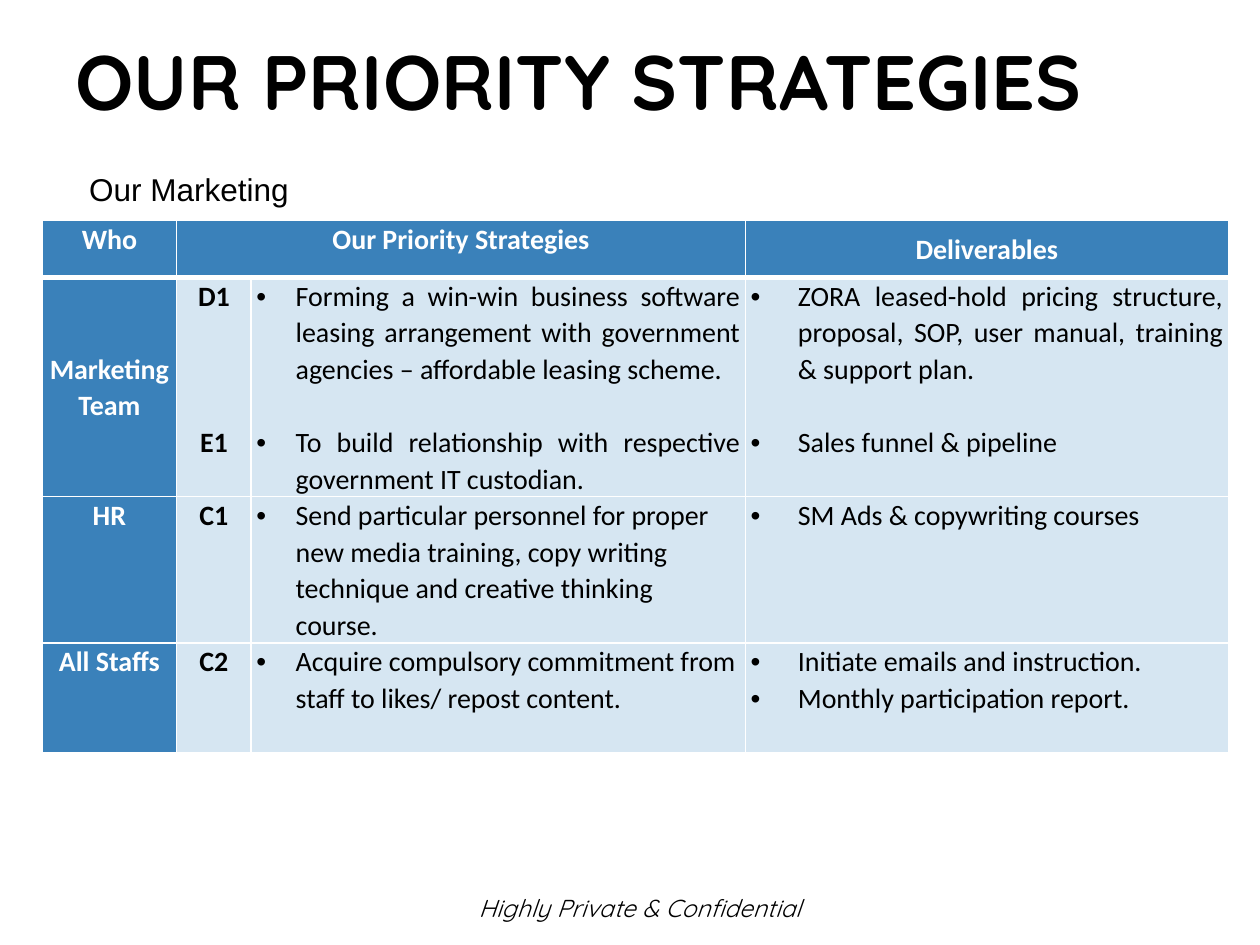
from dataclasses import dataclass

from lxml.etree import SubElement
from pptx import Presentation
from pptx.dml.color import RGBColor
from pptx.enum.text import MSO_ANCHOR, PP_ALIGN
from pptx.oxml.ns import qn
from pptx.util import Pt

BLACK = RGBColor(0x00, 0x00, 0x00)
WHITE = RGBColor(0xFF, 0xFF, 0xFF)
BLUE = RGBColor(0x3A, 0x81, 0xBA)
PALE_BLUE = RGBColor(0xD6, 0xE6, 0xF2)

LINE = 20.9  # height of one table text line, in points
COLUMN_WIDTHS = (77, 42.5, 282.5, 276)
ROW_HEIGHTS = (32.4, 6 * LINE, 4 * LINE, 3 * LINE)
STRATEGY_INDENT = 22.5
DELIVERABLE_INDENT = 27


@dataclass(frozen=True)
class TextBox:
    text: str
    left: float
    top: float
    width: float
    height: float
    font: dict
    alignment: PP_ALIGN = PP_ALIGN.LEFT
    wrap: bool = True


@dataclass(frozen=True)
class CellText:
    lines: tuple[str, ...]
    font: dict
    fill: RGBColor = PALE_BLUE
    alignment: PP_ALIGN = PP_ALIGN.CENTER
    anchor: MSO_ANCHOR = MSO_ANCHOR.TOP
    gap: float = 0
    indent: float = 0


@dataclass(frozen=True)
class StrategyRow:
    who: str
    codes: tuple[str, ...]
    strategies: tuple[str, ...]
    deliverables: tuple[str, ...]
    alignment: PP_ALIGN = PP_ALIGN.LEFT
    who_anchor: MSO_ANCHOR = MSO_ANCHOR.TOP
    code_gap: float = 0
    bullet_gap: float = 0


TABLE_FONT = {"name": "Calibri", "size": Pt(16), "bold": False}
BODY = TABLE_FONT | {"color": BLACK}
CODE = BODY | {"bold": True}
HEADING = CODE | {"color": WHITE}

TEXT_BOXES = (
    TextBox("Highly Private & Confidential", 266.4, 510.5, 242.6, 16.6,
            {"name": "Quicksand", "size": Pt(14), "italic": True, "color": BLACK}),
    TextBox("OUR PRIORITY STRATEGIES", 12.2, 16.6, 637.2, 57.6,
            {"name": "Quicksand", "size": Pt(44), "bold": True, "color": BLACK},
            alignment=PP_ALIGN.CENTER),
    TextBox("Our Marketing", 43.9, 93.6, 141.1, 28.8,
            {"name": "Arial", "size": Pt(18), "color": BLACK}, wrap=False),
)

ROWS = (
    StrategyRow(
        "Marketing Team", ("D1", "E1"),
        ("Forming a win-win business software leasing arrangement with "
         "government agencies – affordable leasing scheme.",
         "To build relationship with respective government IT custodian."),
        ("ZORA leased-hold pricing structure, proposal, SOP, user manual, "
         "training & support plan.",
         "Sales funnel & pipeline"),
        alignment=PP_ALIGN.JUSTIFY, who_anchor=MSO_ANCHOR.MIDDLE,
        code_gap=3 * LINE, bullet_gap=LINE),
    StrategyRow(
        "HR", ("C1",),
        ("Send particular personnel for proper new media training, copy "
         "writing technique and creative thinking course.",),
        ("SM Ads & copywriting courses",)),
    StrategyRow(
        "All Staffs", ("C2",),
        ("Acquire compulsory commitment from staff to likes/ repost content.",),
        ("Initiate emails and instruction.", "Monthly participation report.")),
)


def format_font(font, values: dict) -> None:
    for name, value in values.items():
        if name == "color":
            font.color.rgb = value
        else:
            setattr(font, name, value)


def draw_text_box(slide, box: TextBox) -> None:
    shape = slide.shapes.add_textbox(
        Pt(box.left), Pt(box.top), Pt(box.width), Pt(box.height))
    frame = shape.text_frame
    frame.word_wrap = box.wrap
    frame.vertical_anchor = MSO_ANCHOR.MIDDLE
    for side in ("left", "top", "right", "bottom"):
        setattr(frame, f"margin_{side}", Pt(7.2))
    paragraph = frame.paragraphs[0]
    paragraph.alignment = box.alignment
    run = paragraph.add_run()
    run.text = box.text
    format_font(run.font, box.font)


def add_bullet(paragraph, indent: float) -> None:
    properties = paragraph._p.get_or_add_pPr()
    properties.set("marL", str(Pt(indent)))
    properties.set("indent", str(-Pt(indent)))
    SubElement(properties, qn("a:buFont")).set("typeface", "Arial")
    SubElement(properties, qn("a:buChar")).set("char", "•")


def set_borders(cell, bottom_width: float) -> None:
    properties = cell._tc.get_or_add_tcPr()
    widths = {"lnL": 1, "lnR": 1, "lnT": 1, "lnB": bottom_width}
    for tag, width in widths.items():
        line = SubElement(properties, qn(f"a:{tag}"))
        line.set("w", str(Pt(width)))
        fill = SubElement(line, qn("a:solidFill"))
        SubElement(fill, qn("a:srgbClr")).set("val", str(WHITE))


def fill_cell(cell, content: CellText, bottom_width: float = 1) -> None:
    set_borders(cell, bottom_width)
    cell.fill.solid()
    cell.fill.fore_color.rgb = content.fill
    cell.vertical_anchor = content.anchor
    cell.margin_left = cell.margin_right = Pt(3)
    cell.margin_top = cell.margin_bottom = Pt(0)
    frame = cell.text_frame
    for index, text in enumerate(content.lines):
        paragraph = frame.add_paragraph() if index else frame.paragraphs[0]
        paragraph.alignment = content.alignment
        paragraph.line_spacing = 1.07
        if index and content.gap:
            paragraph.space_before = Pt(content.gap)
        if content.indent:
            add_bullet(paragraph, content.indent)
        run = paragraph.add_run()
        run.text = text
        format_font(run.font, content.font)


def draw_table(slide) -> None:
    table = slide.shapes.add_table(
        len(ROW_HEIGHTS), len(COLUMN_WIDTHS), Pt(24), Pt(126),
        Pt(sum(COLUMN_WIDTHS)), Pt(sum(ROW_HEIGHTS))).table
    table.horz_banding = False
    for column, width in zip(table.columns, COLUMN_WIDTHS):
        column.width = Pt(width)
    for row, height in zip(table.rows, ROW_HEIGHTS):
        row.height = Pt(height)

    # Header row
    table.cell(0, 1).merge(table.cell(0, 2))
    headers = (
        CellText(("Who",), HEADING, BLUE),
        CellText(("Our Priority Strategies",), HEADING, BLUE),
        CellText((), HEADING, BLUE),
        CellText(("Deliverables",), HEADING, BLUE, anchor=MSO_ANCHOR.MIDDLE),
    )
    for column, header in enumerate(headers):
        fill_cell(table.cell(0, column), header, bottom_width=3)

    # Strategy rows
    for row_index, row in enumerate(ROWS, start=1):
        bullets = {"font": BODY, "alignment": row.alignment, "gap": row.bullet_gap}
        contents = (
            CellText((row.who,), HEADING, BLUE, anchor=row.who_anchor),
            CellText(row.codes, CODE, gap=row.code_gap),
            CellText(row.strategies, indent=STRATEGY_INDENT, **bullets),
            CellText(row.deliverables, indent=DELIVERABLE_INDENT, **bullets),
        )
        for column, content in enumerate(contents):
            fill_cell(table.cell(row_index, column), content)


def main() -> None:
    presentation = Presentation()
    presentation.slide_width = Pt(720)
    presentation.slide_height = Pt(540)
    slide = presentation.slides.add_slide(presentation.slide_layouts[6])

    # Footer, title and subtitle
    for box in TEXT_BOXES:
        draw_text_box(slide, box)

    draw_table(slide)
    presentation.save("out.pptx")


if __name__ == "__main__":
    main()
